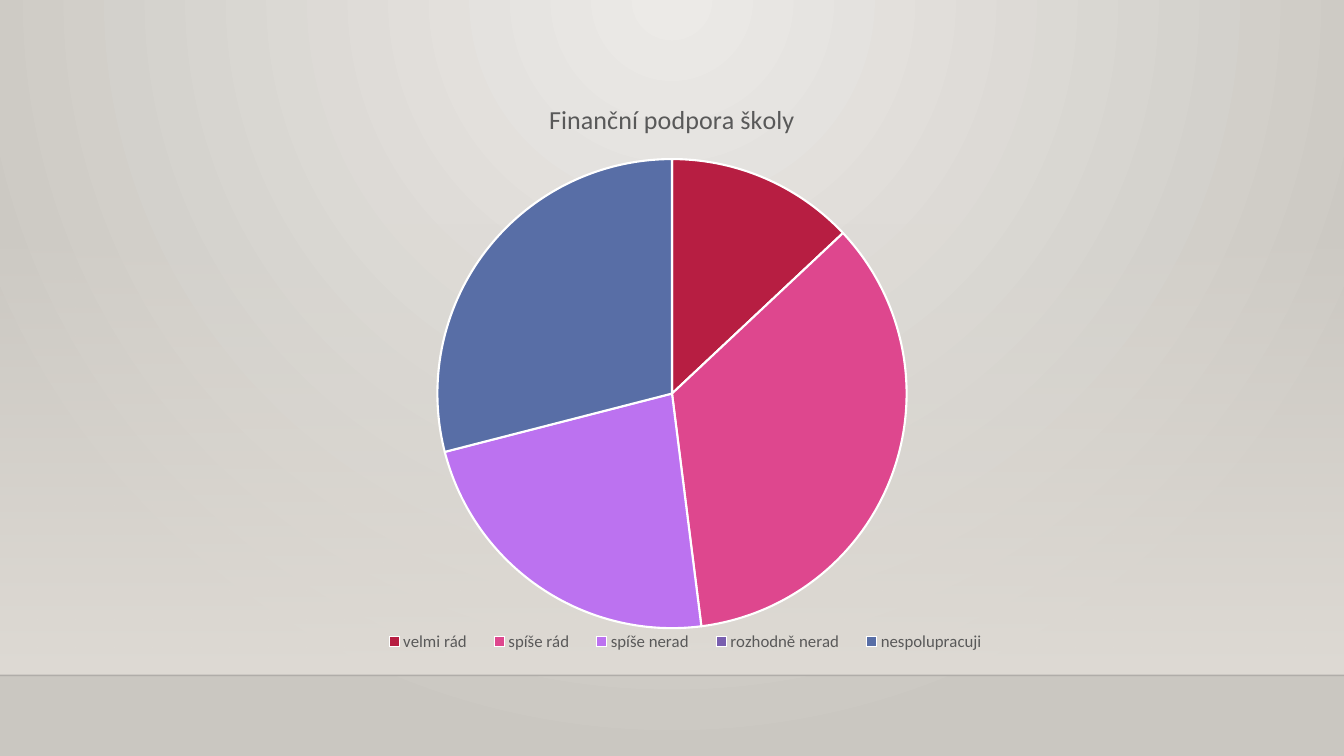
"""Builds a slide with a pie chart of willingness to support a school financially."""
from lxml import etree
from pptx import Presentation
from pptx.chart.data import CategoryChartData
from pptx.dml.color import RGBColor
from pptx.enum.chart import XL_CHART_TYPE, XL_LEGEND_POSITION
from pptx.enum.shapes import MSO_CONNECTOR, MSO_SHAPE
from pptx.oxml import parse_xml
from pptx.oxml.ns import nsdecls, qn
from pptx.util import Inches, Pt


def rgb(color):
    return RGBColor.from_string(color)


def replace_fill(parent, start, start_alpha, end, direction):
    old = parent.find(qn("a:solidFill"))
    parent.replace(old, parse_xml(
        f'<a:gradFill {nsdecls("a")} rotWithShape="1"><a:gsLst>'
        f'<a:gs pos="0"><a:srgbClr val="{start}"><a:alpha val="{start_alpha}"/></a:srgbClr></a:gs>'
        f'<a:gs pos="100000"><a:srgbClr val="{end}"/></a:gs>'
        f'</a:gsLst>{direction}</a:gradFill>'))


TITLE = "Finanční podpora školy"
ANSWERS = [
    ("velmi rád", 13, "B71E42"),
    ("spíše rád", 35, "DE478E"),
    ("spíše nerad", 23, "BC72F0"),
    ("rozhodně nerad", 0, "795FAF"),
    ("nespolupracuji", 29, "586EA6"),
]
FLOOR_TOP = 6.7

prs = Presentation()
prs.slide_width = Inches(13.33)
prs.slide_height = Inches(7.5)
s = prs.slides.add_slide(prs.slide_layouts[6])

s.background.fill.solid()
replace_fill(s._element.find(".//" + qn("p:bgPr")), "ECEAE7", 100000, "CAC7C1",
             '<a:path path="circle"><a:fillToRect l="43000" t="0" r="43000" b="100000"/></a:path>')

wall = s.shapes.add_shape(MSO_SHAPE.RECTANGLE, 0, Inches(2.21),
                          prs.slide_width, Inches(FLOOR_TOP - 2.21))
wall.shadow.inherit = False
wall.line.fill.background()
wall.fill.solid()
replace_fill(wall._element.spPr, "DFDBD5", 0, "DFDBD5", '<a:lin ang="5400000" scaled="0"/>')

edge = s.shapes.add_connector(MSO_CONNECTOR.STRAIGHT, 0, Inches(FLOOR_TOP),
                              prs.slide_width, Inches(FLOOR_TOP))
edge.line.width = Pt(1)
edge.line.color.rgb = rgb("000001")
edge_color = edge._element.spPr.find(".//" + qn("a:srgbClr"))
etree.SubElement(edge_color, qn("a:alpha")).set("val", "20000")
etree.SubElement(edge._element.spPr, qn("a:effectLst"))

data = CategoryChartData()
data.categories = [name for name, value, color in ANSWERS]
data.add_series(TITLE, [value for name, value, color in ANSWERS])
chart = s.shapes.add_chart(XL_CHART_TYPE.PIE, Inches(2.22), Inches(0.79),
                           Inches(8.89), Inches(5.93), data).chart
chart.font.name = "Calibri"
chart.font.size = Pt(10)
chart.font.color.rgb = rgb("000000")

chart.has_title = True
tf = chart.chart_title.text_frame
tf.text = TITLE
chart.chart_title.include_layout = False
chart.has_legend = True
chart.legend.position = XL_LEGEND_POSITION.BOTTOM
chart.legend.include_layout = False
for font, size in ((tf.paragraphs[0].runs[0].font, 18.6), (chart.legend.font, 12)):
    font.name = "Calibri"
    font.size = Pt(size)
    font.bold = False
    font.color.rgb = rgb("595959")

legend_layout = parse_xml(
    f'<c:layout {nsdecls("c")}><c:manualLayout>'
    '<c:xMode val="edge"/><c:yMode val="edge"/>'
    '<c:x val="0.16"/><c:y val="0.91"/><c:w val="0.71"/><c:h val="0.06"/>'
    '</c:manualLayout></c:layout>')
legend = chart.legend._element
for old in legend.findall(qn("c:layout")):
    legend.remove(old)
legend.find(qn("c:legendPos")).addnext(legend_layout)

plot = chart.plots[0]
plot.vary_by_categories = True
for i, (name, value, color) in enumerate(ANSWERS):
    point = plot.series[0].points[i]
    point.format.fill.solid()
    point.format.fill.fore_color.rgb = rgb(color)
    point.format.line.color.rgb = rgb("FFFFFF")
    point.format.line.width = Pt(1.5)

prs.save("out.pptx")
